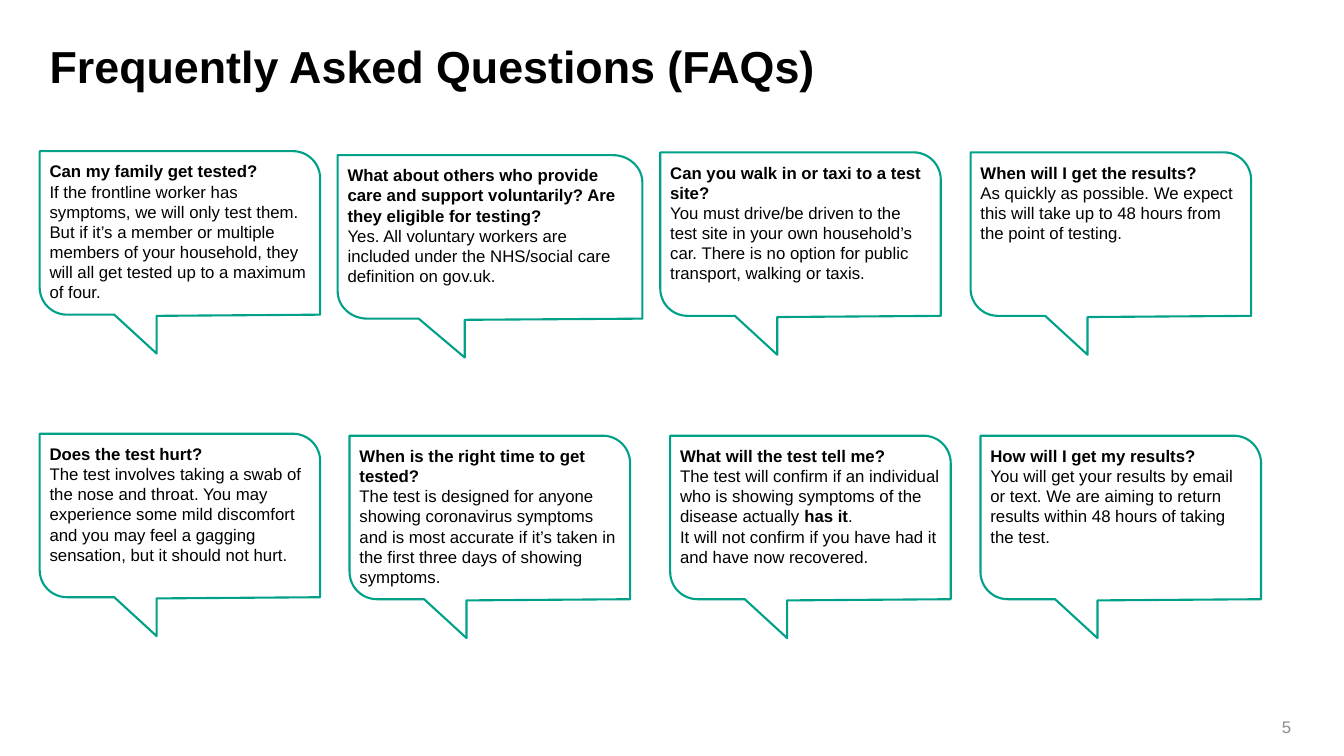
import math
from dataclasses import dataclass

import pptx
import pptx.dml.color
import pptx.enum.text
import pptx.util
from pptx.util import Cm


@dataclass(frozen=True)
class Theme:
    font: str = "Arial"
    ink: str = "000000"
    page_grey: str = "8C8C8C"
    teal: str = "00A188"
    title_size: int = 32
    body_size: int = 12
    outline: float = 1.5


THEME = Theme()
ALIGN = pptx.enum.text.PP_ALIGN
ANCHOR = pptx.enum.text.MSO_ANCHOR


def write(frame, paragraphs, *, size=THEME.body_size, color=THEME.ink,
          align=ALIGN.LEFT, anchor=ANCHOR.TOP, spacing=1.0,
          margin_x=0.25, margin_y=0.25):
    """Fill a text frame; each paragraph is a list of (text, bold) runs."""
    frame.word_wrap = True
    frame.auto_size = pptx.enum.text.MSO_AUTO_SIZE.NONE
    frame.vertical_anchor = anchor
    frame.margin_left = frame.margin_right = Cm(margin_x)
    frame.margin_top = frame.margin_bottom = Cm(margin_y)
    for index, runs in enumerate(paragraphs):
        paragraph = frame.paragraphs[0] if index == 0 else frame.add_paragraph()
        paragraph.alignment = align
        paragraph.line_spacing = spacing
        for text, bold in runs:
            run = paragraph.add_run()
            run.text = text
            run.font.name = THEME.font
            run.font.size = pptx.util.Pt(size)
            run.font.bold = bold
            run.font.color.rgb = pptx.dml.color.RGBColor.from_string(color)


def bubble_outline(width):
    """Points in cm of a speech bubble with two round corners and a tail."""
    radius_x, radius_y, body = 0.097 * width, 0.69, 4.12
    angles = [math.radians(step * 7.5) for step in range(13)]
    lower_left = [(radius_x * (1 - math.cos(a)),
                   body - radius_y * (1 - math.sin(a))) for a in angles]
    upper_right = [(width - radius_x * (1 - math.cos(a)),
                    radius_y * (1 - math.sin(a))) for a in angles]
    tail = [(0.266 * width, body), (0.417 * width, 5.1),
            (0.417 * width, 4.15), (width, body)]
    return [(0, 0)] + lower_left + tail + upper_right


presentation = pptx.Presentation()
presentation.slide_width = Cm(33.87)
presentation.slide_height = Cm(19.05)
slide = presentation.slides.add_slide(presentation.slide_layouts[5])

title = slide.shapes.title
title.left, title.top, title.width, title.height = Cm(1), Cm(1), Cm(31.8), Cm(2.34)
write(title.text_frame, [[("Frequently Asked Questions (FAQs)", True)]],
      size=THEME.title_size, spacing=0.9, margin_y=0.13)

page_number = slide.shapes.add_textbox(Cm(30.69), Cm(17.66), Cm(2.1), Cm(1.01))
write(page_number.text_frame, [[("5", False)]], color=THEME.page_grey,
      align=ALIGN.RIGHT, anchor=ANCHOR.BOTTOM, margin_y=0.1)

# left, top, width in cm; question; answer paragraphs
faqs = [
    (1, 3.81, 7.07, "Can my family get tested?", [
        [("If the frontline worker has symptoms, we will only test them.", False)],
        [("But if it’s a member or multiple members of your household, they will "
          "all get tested up to a maximum of four.", False)]]),
    (8.51, 3.91, 7.68,
     "What about others who provide care and support voluntarily? "
     "Are they eligible for testing?", [
         [("Yes. All voluntary workers are included under the NHS/social care "
           "definition on gov.uk.", False)]]),
    (16.64, 3.84, 7.07, "Can you walk in or taxi to a test site?", [
        [("You must drive/be driven to the test site in your own household’s car. "
          "There is no option for public transport, walking or taxis.", False)]]),
    (24.46, 3.84, 7.07, "When will I get the results?", [
        [("As quickly as possible. We expect this will take up to 48 hours from "
          "the point of testing.", False)]]),
    (1, 10.93, 7.07, "Does the test hurt?", [
        [("The test involves taking a swab of the nose and throat. You may "
          "experience some mild discomfort and you may feel a gagging sensation, "
          "but it should not hurt.", False)]]),
    (8.81, 10.98, 7.07, "When is the right time to get tested?", [
        [("The test is designed for anyone showing coronavirus symptoms and is "
          "most accurate if it’s taken in the first three days of showing "
          "symptoms.", False)]]),
    (16.89, 10.98, 7.07, "What will the test tell me?", [
        [("The test will confirm if an individual who is showing symptoms of the "
          "disease actually ", False), ("has it", True), (".", False)],
        [("It will not confirm if you have had it and have now recovered.", False)]]),
    (24.71, 10.98, 7.07, "How will I get my results?", [
        [("You will get your results by email or text. We are aiming to return "
          "results within 48 hours of taking the test.", False)]]),
]

for left, top, width, question, answer in faqs:
    outline = [(Cm(x), Cm(y)) for x, y in bubble_outline(width)]
    builder = slide.shapes.build_freeform(*outline[0])
    builder.add_line_segments(outline[1:], close=True)
    bubble = builder.convert_to_shape(Cm(left), Cm(top))
    bubble.shadow.inherit = False
    bubble.fill.background()
    bubble.line.color.rgb = pptx.dml.color.RGBColor.from_string(THEME.teal)
    bubble.line.width = pptx.util.Pt(THEME.outline)
    write(bubble.text_frame, [[(question, True)]] + answer)

presentation.save("out.pptx")
